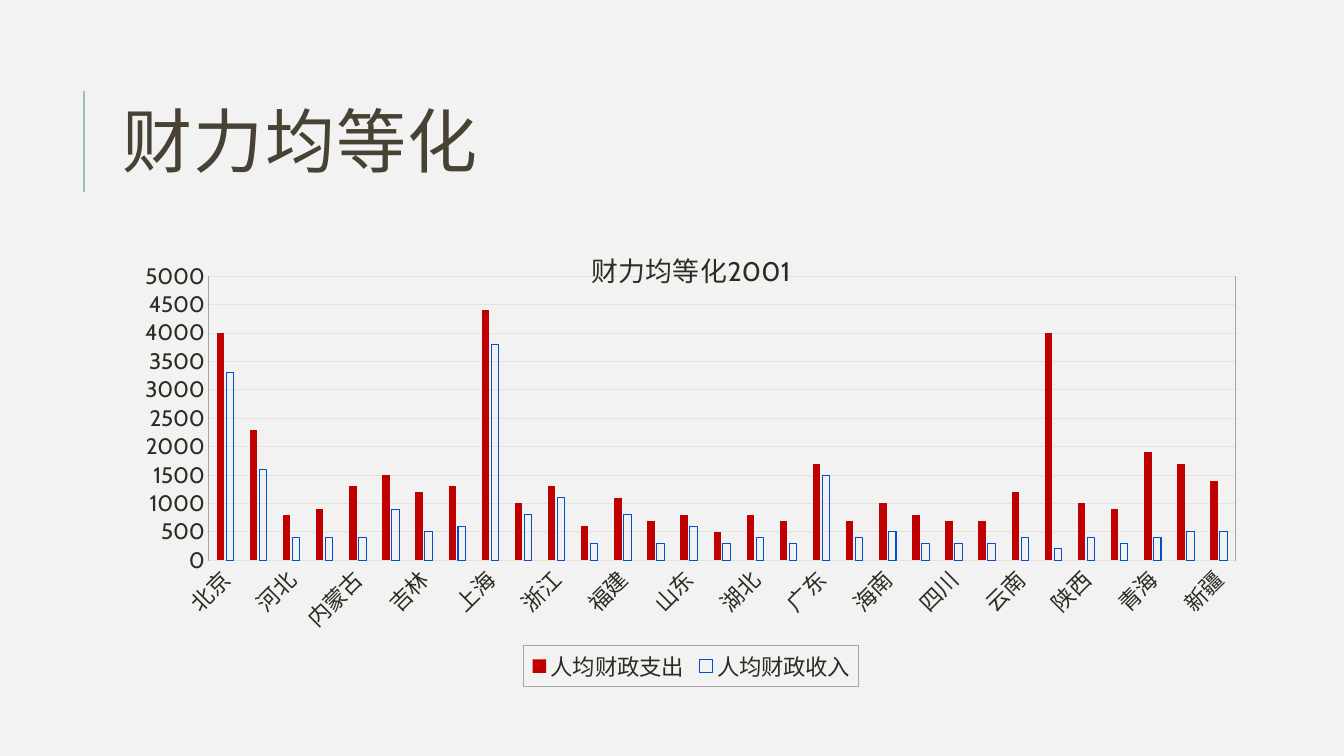
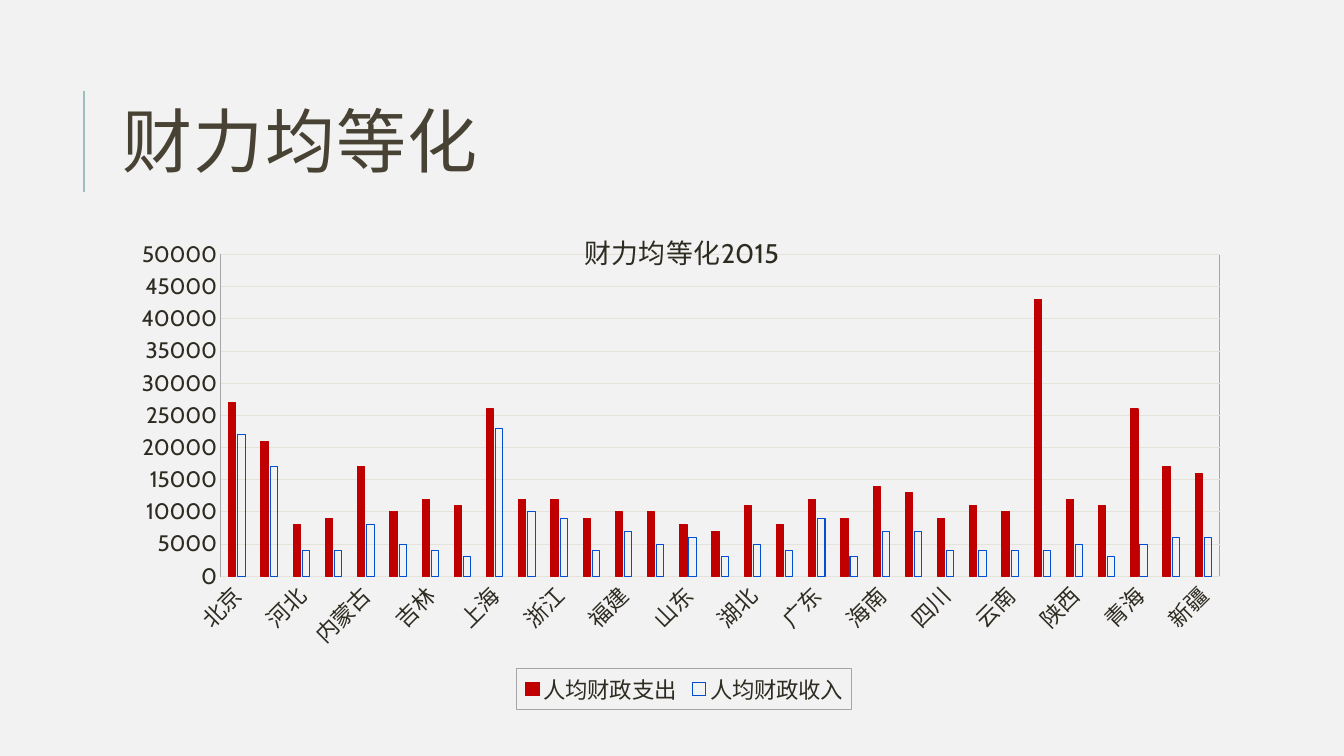
from pptx import Presentation
from pptx.chart.data import CategoryChartData
from pptx.dml.color import RGBColor
from pptx.enum.chart import XL_CHART_TYPE, XL_LEGEND_POSITION, XL_TICK_MARK
from pptx.enum.shapes import MSO_CONNECTOR
from pptx.enum.text import MSO_ANCHOR
from pptx.oxml import parse_xml
from pptx.oxml.ns import nsdecls, qn
from pptx.util import Cm, Pt

COLUMNS = XL_CHART_TYPE.COLUMN_CLUSTERED
BOTTOM = XL_LEGEND_POSITION.BOTTOM
NO_TICK = XL_TICK_MARK.NONE
STRAIGHT = MSO_CONNECTOR.STRAIGHT
MIDDLE = MSO_ANCHOR.MIDDLE

PROVINCES = ["北京", "天津", "河北", "山西", "内蒙古", "辽宁", "吉林", "黑龙江",
             "上海", "江苏", "浙江", "安徽", "福建", "江西", "山东", "河南",
             "湖北", "湖南", "广东", "广西", "海南", "重庆", "四川", "贵州",
             "云南", "西藏", "陕西", "甘肃", "青海", "宁夏", "新疆"]

# One entry per slide; layout boxes are fractions of the chart
YEARS = [
    {"title": "财力均等化2001", "at": (2.84, 5.51, 29.11, 11.81),
     "top": 5000, "spending_line": None,
     "title_at": (0.41, 0.05), "plot_at": (0.083, 0.123, 0.889, 0.607),
     "legend_at": (0.356, 0.912, 0.29, 0.088),
     "spending": [4000, 2300, 800, 900, 1300, 1500, 1200, 1300, 4400, 1000,
                  1300, 600, 1100, 700, 800, 500, 800, 700, 1700, 700, 1000,
                  800, 700, 700, 1200, 4000, 1000, 900, 1900, 1700, 1400],
     "revenue": [3300, 1600, 400, 400, 400, 900, 500, 600, 3800, 800, 1100,
                 300, 800, 300, 600, 300, 400, 300, 1500, 400, 500, 300, 300,
                 300, 400, 200, 400, 300, 400, 500, 500]},
    {"title": "财力均等化2015", "at": (2.84, 5, 28.7, 12.9),
     "top": 50000, "spending_line": "C00000",
     "title_at": (0.41, 0.05), "plot_at": (0.095, 0.11, 0.877, 0.629),
     "legend_at": (0.355, 0.92, 0.294, 0.08),
     "spending": [27000, 21000, 8000, 9000, 17000, 10000, 12000, 11000, 26000,
                  12000, 12000, 9000, 10000, 10000, 8000, 7000, 11000, 8000,
                  12000, 9000, 14000, 13000, 9000, 11000, 10000, 43000, 12000,
                  11000, 26000, 17000, 16000],
     "revenue": [22000, 17000, 4000, 4000, 8000, 5000, 4000, 3000, 23000,
                 10000, 9000, 4000, 7000, 5000, 6000, 3000, 5000, 4000, 9000,
                 3000, 7000, 7000, 4000, 4000, 4000, 4000, 5000, 3000, 5000,
                 6000, 6000]},
]


def rgb(value):
    return RGBColor.from_string(value)


def set_line(line, color, width=0.75):
    if color is None:
        line.fill.background()
    else:
        line.color.rgb = rgb(color)
        line.width = Pt(width)


def set_font(font, values):
    for name, value in values.items():
        if name == "color":
            font.color.rgb = rgb(value)
        else:
            setattr(font, name, value)


def place(element, index, box, inner=False):
    """Give a chart part a manual layout as its child number index."""
    for old in element.findall(qn("c:layout")):
        element.remove(old)
    target = '<c:layoutTarget val="inner"/>' if inner else ""
    modes = "".join(f'<c:{k}Mode val="edge"/>' for k in "xy")
    sizes = "".join(f'<c:{k} val="{v}"/>' for k, v in zip("xywh", box))
    element.insert(index, parse_xml(
        f'<c:layout {nsdecls("c")}><c:manualLayout>{target}{modes}{sizes}'
        '</c:manualLayout></c:layout>'))


def border(color):
    return parse_xml(
        f'<c:spPr {nsdecls("c", "a")}><a:noFill/><a:ln w="9525"><a:solidFill>'
        f'<a:srgbClr val="{color}"/></a:solidFill></a:ln></c:spPr>')


class Deck:
    BACK, RULE, GRID, FRAME = "F2F2F2", "9CBEBD", "E4E2D9", "A6A6A6"
    SPENDING, REVENUE = "C00000", "004FD0"
    TITLE = {"name": "Calibri", "size": Pt(50), "color": "474233"}
    LABEL = {"name": "Cabin", "size": Pt(16), "color": "2E2B21", "bold": False}
    CAPTION = {**LABEL, "size": Pt(19.2)}

    def __init__(self):
        self.prs = Presentation()
        self.prs.slide_width, self.prs.slide_height = Cm(33.87), Cm(19.05)
        self.s = None

    def slide(self, title):
        self.s = self.prs.slides.add_slide(self.prs.slide_layouts[6])
        fill = self.s.background.fill
        fill.solid()
        fill.fore_color.rgb = rgb(self.BACK)
        self.rule(2.11, 4.83, 2.11, 2.29)
        self.title(title)

    def rule(self, *ends):
        line = self.s.shapes.add_connector(STRAIGHT, *map(Cm, ends))
        set_line(line.line, self.RULE, 1.5)
        line._element.spPr.append(parse_xml(f'<a:effectLst {nsdecls("a")}/>'))

    def title(self, text):
        box = self.s.shapes.add_textbox(*map(Cm, (2.84, 1.63, 27, 4.17)))
        tf = box.text_frame
        tf.word_wrap = True
        tf.vertical_anchor = MIDDLE
        p = tf.paragraphs[0]
        p.line_spacing = 0.8
        r = p.add_run()
        r.text = text
        set_font(r.font, self.TITLE)
        r._r.get_or_add_rPr().set("spc", "100")

    def chart(self, year):
        data = CategoryChartData()
        data.categories = PROVINCES
        data.add_series("人均财政支出", year["spending"])
        data.add_series("人均财政收入", year["revenue"])
        frame = self.s.shapes.add_chart(COLUMNS, *map(Cm, year["at"]), data)
        chart = frame.chart
        set_font(chart.font, self.LABEL)

        # Columns
        plot = chart.plots[0]
        plot.gap_width, plot.overlap, plot.vary_by_categories = 219, -27, False
        spending, revenue = plot.series
        spending.format.fill.solid()
        spending.format.fill.fore_color.rgb = rgb(self.SPENDING)
        set_line(spending.format.line, year["spending_line"])
        revenue.format.fill.background()
        set_line(revenue.format.line, self.REVENUE)
        area = chart._chartSpace.find(".//" + qn("c:plotArea"))
        place(area, 0, year["plot_at"], inner=True)
        area.append(border(self.FRAME))

        # Axes
        cats, values = chart.category_axis, chart.value_axis
        for axis, color in ((cats, self.GRID), (values, None)):
            axis.major_tick_mark = axis.minor_tick_mark = NO_TICK
            set_font(axis.tick_labels.font, self.LABEL)
            set_line(axis.format.line, color)
        body = cats._element.find(".//" + qn("a:bodyPr"))
        body.set("rot", "-2700000")
        body.set("vert", "horz")
        values.minimum_scale, values.maximum_scale = 0, year["top"]
        values.major_unit = year["top"] / 10
        set_line(values.major_gridlines.format.line, self.GRID)

        # Chart title
        title = chart.chart_title
        p = title.text_frame.paragraphs[0]
        r = p.add_run()
        r.text = year["title"]
        set_font(r.font, self.CAPTION)
        place(title._element, 1, year["title_at"])

        # Legend
        chart.has_legend = True
        legend = chart.legend
        legend.position = BOTTOM
        legend.include_in_layout = False
        set_font(legend.font, self.LABEL)
        place(legend._element, 1, year["legend_at"])
        overlay = legend._element.find(qn("c:overlay"))
        overlay.addnext(border(self.FRAME))


def main():
    deck = Deck()
    for year in YEARS:
        deck.slide("财力均等化")
        deck.chart(year)
    deck.prs.save("out.pptx")


if __name__ == "__main__":
    main()
